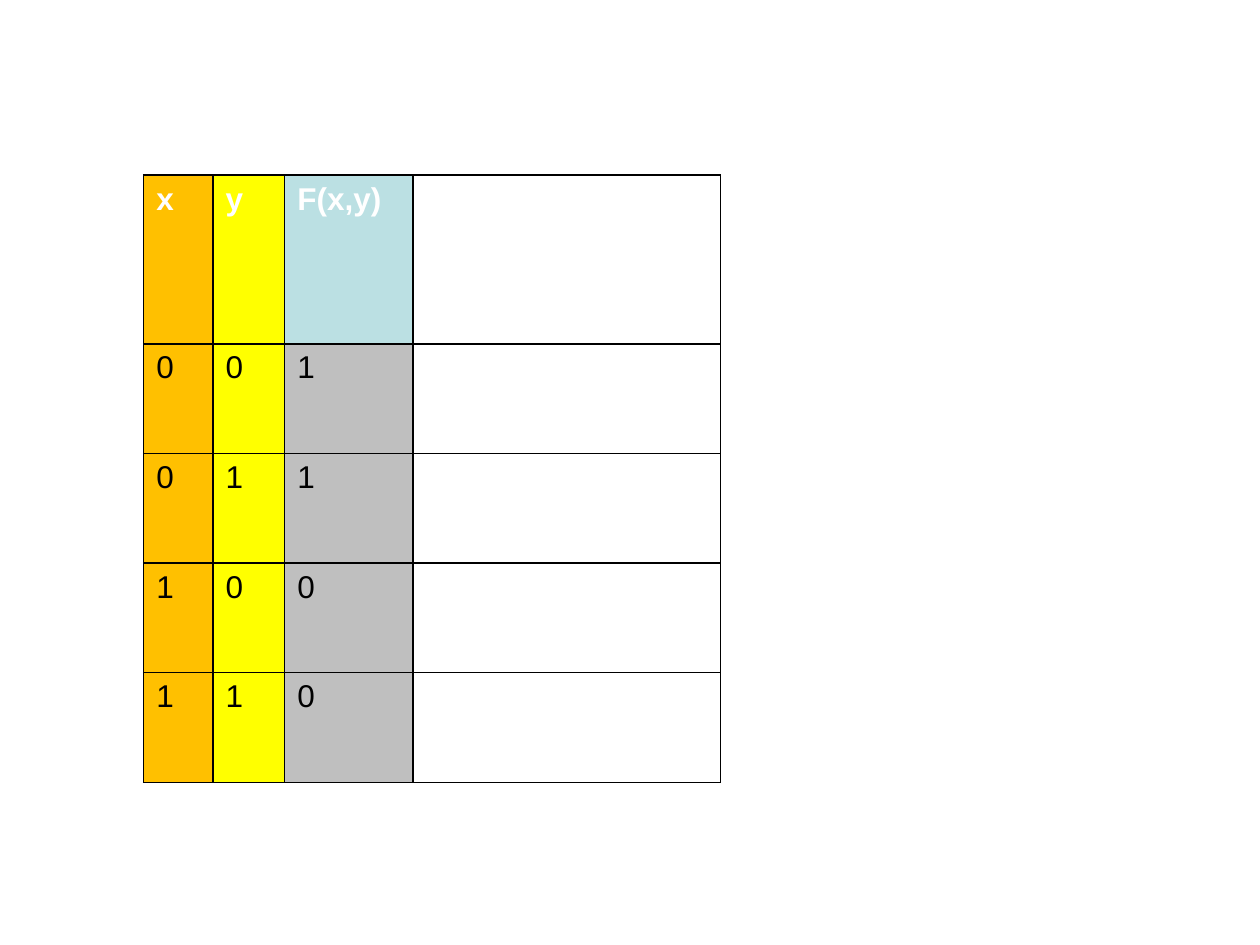
from itertools import product

from lxml.etree import SubElement
from pptx import Presentation
from pptx.dml.color import RGBColor
from pptx.oxml.ns import qn
from pptx.util import Inches, Pt

# Theme: colours, type and line sizes
theme = {
    "line": "000000",
    "width": Pt(1),
    "fills": ["FFC000", "FFFF00", "BFBFBF", None],
    "result": "BBE0E3",
    "head": {"name": "Arial", "size": Pt(18), "bold": True},
    "body": {"name": "Arial", "size": Pt(18), "bold": False},
    "head_ink": "FFFFFF",
    "body_ink": "000000",
}


def border(cell):
    """Draw a solid line on all four sides of a cell."""
    props = cell._tc.get_or_add_tcPr()
    for at, side in enumerate(("lnL", "lnR", "lnT", "lnB")):
        line = SubElement(props, qn(f"a:{side}"), w=str(theme["width"]))
        fill = SubElement(line, qn("a:solidFill"))
        SubElement(fill, qn("a:srgbClr"), val=theme["line"])
        props.insert(at, line)


# Slide
deck = Presentation()
deck.slide_width, deck.slide_height = Inches(10), Inches(7.5)
slide = deck.slides.add_slide(deck.slide_layouts[6])

# Truth table of F(x,y) = not x, with an empty last column
rows = [["x", "y", "F(x,y)", ""]]
rows += [[str(x), str(y), str(1 - x), ""] for x, y in product((0, 1), repeat=2)]
widths = [0.55, 0.57, 1.02, 2.44]
heights = [1.34] + [0.87] * 4

frame = slide.shapes.add_table(
    len(rows), len(widths), Inches(1.14), Inches(1.39),
    Inches(sum(widths)), Inches(sum(heights)),
)
table = frame.table
table.horz_banding = False
for col, width in zip(table.columns, widths):
    col.width = Inches(width)
for row, height in zip(table.rows, heights):
    row.height = Inches(height)

# Cells: fill, text and borders
for r, row in enumerate(rows):
    part = "body" if r else "head"
    for c, text in enumerate(row):
        cell = table.cell(r, c)
        shade = theme["result"] if (r, c) == (0, 2) else theme["fills"][c]
        if shade:
            cell.fill.solid()
            cell.fill.fore_color.rgb = RGBColor.from_string(shade)
        else:
            cell.fill.background()
        border(cell)

        cell.text = text
        font = cell.text_frame.paragraphs[0].font
        for key, value in theme[part].items():
            setattr(font, key, value)
        font.color.rgb = RGBColor.from_string(theme[f"{part}_ink"])

deck.save("out.pptx")
